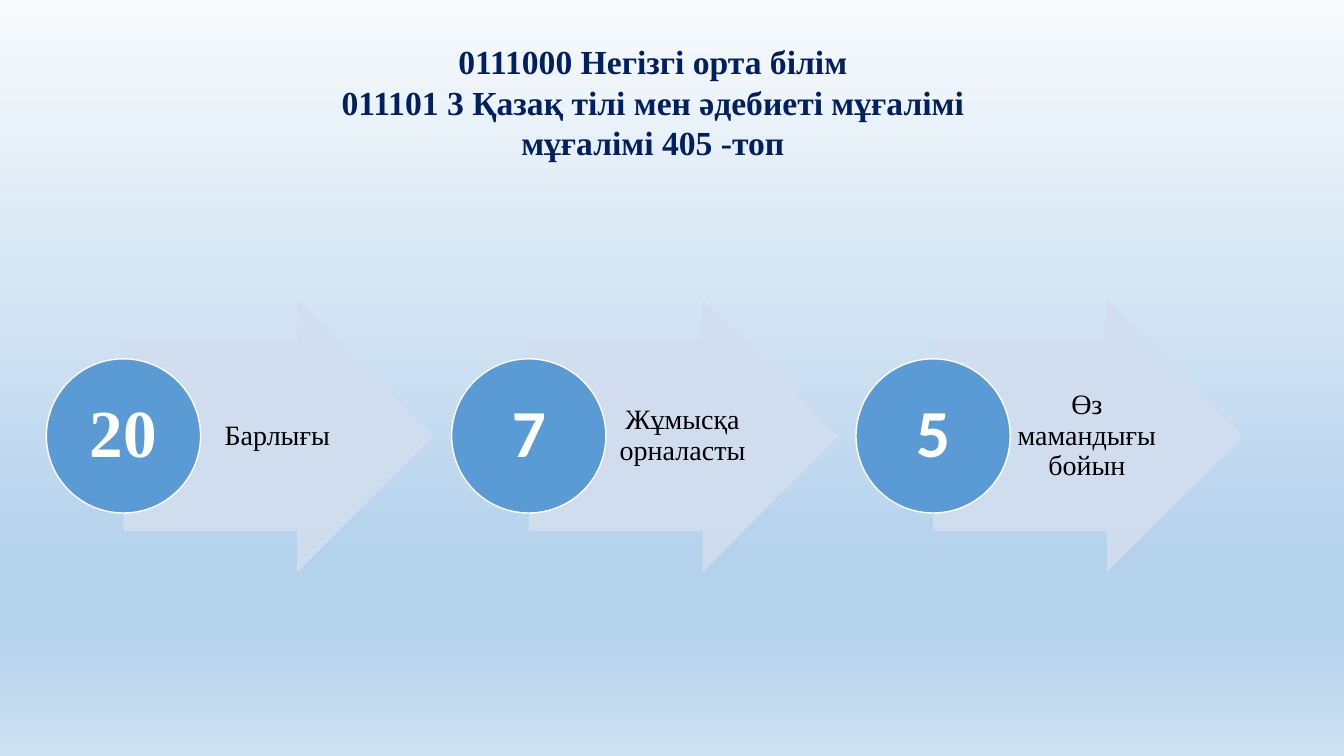
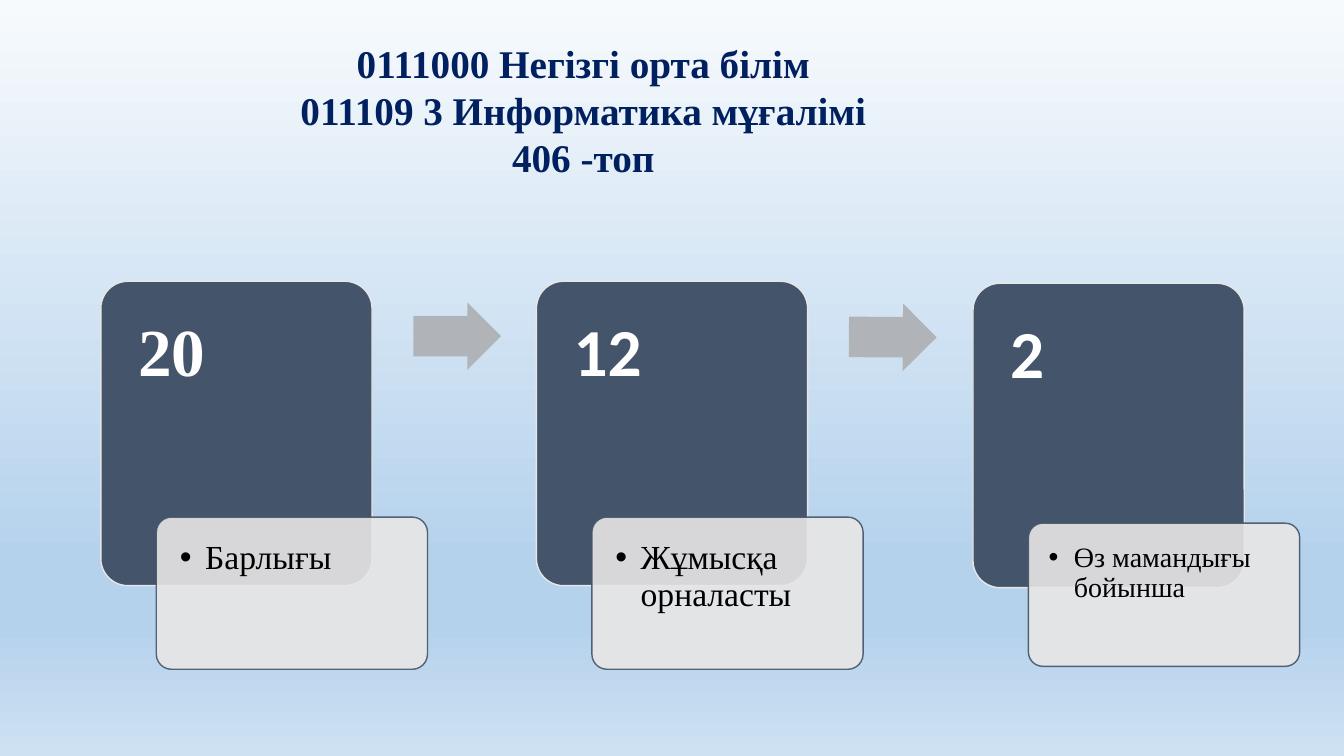
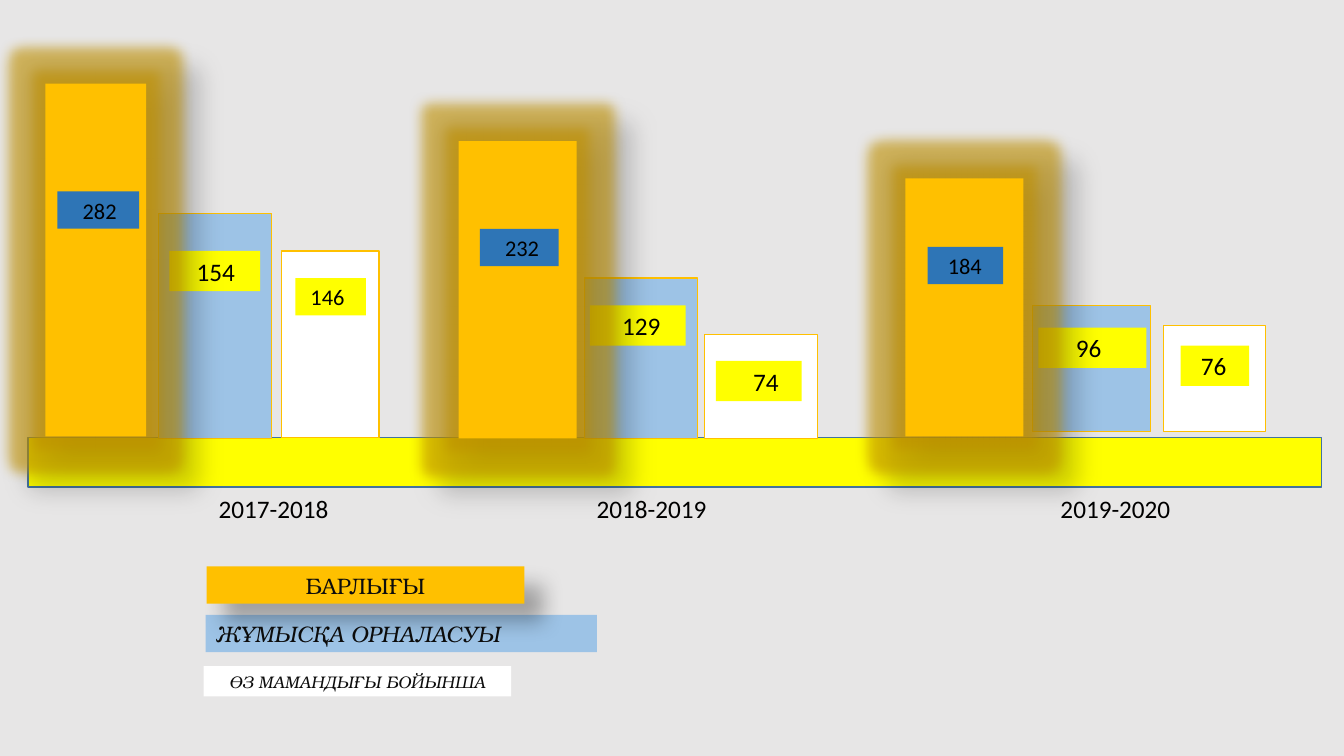
from dataclasses import dataclass
from typing import Optional

from lxml import etree
from pptx import Presentation
from pptx.dml.color import RGBColor
from pptx.enum.shapes import MSO_SHAPE
from pptx.enum.text import MSO_ANCHOR, MSO_AUTO_SIZE, PP_ALIGN
from pptx.oxml.ns import qn
from pptx.util import Emu, Pt

RECT = MSO_SHAPE.RECTANGLE
ROUND = MSO_SHAPE.ROUNDED_RECTANGLE
OVAL = MSO_SHAPE.OVAL
ARROW = MSO_SHAPE.RIGHT_ARROW
TOP, MIDDLE = MSO_ANCHOR.TOP, MSO_ANCHOR.MIDDLE
LEFT, CENTER = PP_ALIGN.LEFT, PP_ALIGN.CENTER
NO_AUTOSIZE = MSO_AUTO_SIZE.NONE

PX = 9144
TITLE_ONLY, BLANK = 5, 6
SERIF, SANS, LEGEND_FONT = "Times New Roman", "Calibri", "TeX Gyre Bonum"
COLORS = {
    "navy": "002060", "black": "000000", "ink": "0D0D0D", "white": "FFFFFF",
    "pale": "D2DEEF", "blue": "5B9BD5", "slate": "44546A", "grey": "E7E6E6",
    "arrow": "B0B4B9", "yellow": "FFFF00", "edge": "43739E", "gold": "FFC000",
    "glow": "BF9000", "sky": "9DC3E6", "deep": "2E75B6",
}
BACKDROP = [(0, "F7FAFD"), (74, "B5D2EC"), (83, "B5D2EC"), (100, "CEE1F2")]


@dataclass(frozen=True)
class Box:
    x: int
    y: int
    w: int
    h: int


@dataclass(frozen=True)
class Style:
    size: int
    font: str = SANS
    color: str = "black"
    bold: bool = False
    italic: bool = False


@dataclass(frozen=True)
class Step:
    value: str
    label: str
    font: str = SANS


@dataclass(frozen=True)
class Card:
    step: Step
    drop: int
    label_y: int
    label_h: int
    inset: int
    size: int


@dataclass(frozen=True)
class Bar:
    box: Box
    tag: Box
    value: str
    indent: int


@dataclass(frozen=True)
class Series:
    name: str
    color: str
    tag_color: str
    tag_sizes: tuple
    line: Optional[str]
    legend: Box
    legend_style: Style
    legend_align: PP_ALIGN
    bars: tuple
    raised: bool = False


def px(n: int) -> Emu:
    return Emu(n * PX)


def rgb(name: str) -> RGBColor:
    return RGBColor.from_string(COLORS[name])


def add_color(parent, hex_color: str, alpha: int):
    clr = etree.SubElement(parent, qn("a:srgbClr"), val=hex_color)
    etree.SubElement(clr, qn("a:alpha"), val=str(alpha * 1000))


def set_alpha(sp, alpha: int):
    for clr in sp.element.spPr.iter(qn("a:srgbClr")):
        etree.SubElement(clr, qn("a:alpha"), val=str(alpha * 1000))


def add_shape(slide, kind, box: Box, fill: str, line: Optional[str] = None,
              alpha: int = 100, adj: tuple = ()):
    sp = slide.shapes.add_shape(kind, px(box.x), px(box.y), px(box.w), px(box.h))
    sp.shadow.inherit = False
    sp.fill.solid()
    sp.fill.fore_color.rgb = rgb(fill)
    if line:
        sp.line.color.rgb = rgb(line)
        sp.line.width = Pt(1)
    else:
        sp.line.fill.background()
    for i, value in enumerate(adj):
        sp.adjustments[i] = value
    if alpha < 100:
        set_alpha(sp, alpha)
    return sp


def add_text(sp, lines: list, style: Style, align=CENTER, anchor=MIDDLE,
             insets: tuple = (10, 5, 10, 5), spacing: float = 1.0):
    tf = sp.text_frame
    tf.word_wrap = True
    tf.auto_size = NO_AUTOSIZE
    tf.vertical_anchor = anchor
    tf.margin_left, tf.margin_top, tf.margin_right, tf.margin_bottom = map(px, insets)
    for i, line in enumerate(lines):
        p = tf.add_paragraph() if i else tf.paragraphs[0]
        p.alignment = align
        p.line_spacing = spacing
        r = p.add_run()
        r.text = line
        r.font.name = style.font
        r.font.size = Pt(style.size)
        r.font.bold = style.bold
        r.font.italic = style.italic
        r.font.color.rgb = rgb(style.color)
    return tf


def add_text_box(slide, box: Box, text: str, style: Style, **options):
    sp = slide.shapes.add_textbox(px(box.x), px(box.y), px(box.w), px(box.h))
    add_text(sp, [text], style, **options)


def add_bullet(p, indent: int):
    pPr = p._p.get_or_add_pPr()
    pPr.set("marL", str(px(indent)))
    pPr.set("indent", str(-px(indent)))
    etree.SubElement(pPr, qn("a:buFont"), typeface="Arial")
    etree.SubElement(pPr, qn("a:buChar"), char="•")


def add_drop_shadow(sp):
    effects = sp.element.spPr.find(qn("a:effectLst"))
    shadow = etree.SubElement(effects, qn("a:outerShdw"), blurRad=str(Pt(15)),
                              dist=str(Pt(18)), dir="2700000", algn="tl",
                              rotWithShape="0")
    add_color(shadow, COLORS["black"], 30)


def add_glow(sp):
    effects = sp.element.spPr.find(qn("a:effectLst"))
    glow = etree.SubElement(effects, qn("a:glow"), rad=str(Pt(18)))
    add_color(glow, COLORS["glow"], 60)


def set_backdrop(master):
    fill = master.background.fill
    fill.gradient()
    fill.gradient_angle = 270
    stops = next(master.element.iter(qn("a:gsLst")))
    for stop in list(stops):
        stops.remove(stop)
    for pos, color in BACKDROP:
        stop = etree.SubElement(stops, qn("a:gs"), pos=str(pos * 1000))
        etree.SubElement(stop, qn("a:srgbClr"), val=color)


def add_titled_slide(prs, box: Box, lines: list, size: int):
    slide = prs.slides.add_slide(prs.slide_layouts[TITLE_ONLY])
    title = slide.shapes.title
    title.left, title.top = px(box.x), px(box.y)
    title.width, title.height = px(box.w), px(box.h)
    add_text(title, lines, Style(size, SERIF, "navy", bold=True), anchor=TOP)
    return slide


def number_style(step: Step) -> Style:
    return Style(48, step.font, "white", bold=True)


def build_arrow_slide(prs):
    slide = add_titled_slide(prs, Box(314, 36, 667, 131), [
        "0111000 Негізгі орта білім",
        "011101 3 Қазақ тілі мен әдебиеті мұғалімі мұғалімі 405 -топ",
    ], 24)
    steps = [Step("20", "Барлығы", SERIF), Step("7", "Жұмысқа орналасты"),
             Step("5", "Өз мамандығы бойын")]
    for i, step in enumerate(steps):
        x = round(46 + i * 401.5)
        add_shape(slide, ARROW, Box(x + 77, 299, 306, 267), "pale", "pale", 90, (0.7, 0.5))
        add_text_box(slide, Box(x + 153, 339, 149, 187), step.label, Style(20, SERIF),
                     insets=(6, 1, 3, 1), spacing=0.9)
        circle = add_shape(slide, OVAL, Box(x, 356, 153, 153), "blue", "white")
        add_text(circle, [step.value], number_style(step), insets=(3, 3, 3, 3), spacing=0.9)


def build_card_slide(prs):
    slide = add_titled_slide(prs, Box(245, 34, 667, 151), [
        "0111000 Негізгі орта білім",
        "011109 3 Информатика мұғалімі",
        "406 -топ",
    ], 28)
    cards = [
        Card(Step("20", "Барлығы", SERIF), 0, 513, 151, 19, 24),
        Card(Step("12", "Жұмысқа орналасты"), 0, 513, 151, 19, 24),
        Card(Step("2", "Өз мамандығы бойынша"), 2, 519, 142, 16, 20),
    ]
    for i, card in enumerate(cards):
        x = round(100 + i * 432.5)
        panel = add_shape(slide, ROUND, Box(x, 279 + card.drop, 269, 302), "slate", "grey",
                          adj=(0.1,))
        add_text(panel, [card.step.value], number_style(card.step), LEFT, TOP,
                 (29, 29, 29, 20), 0.9)
        label = add_shape(slide, ROUND, Box(x + 55, card.label_y, 269, card.label_h),
                          "grey", "slate", 90, (0.1,))
        tf = add_text(label, [card.step.label], Style(card.size, SERIF), LEFT, TOP,
                      (card.inset,) * 4, 0.9)
        add_bullet(tf.paragraphs[0], 25)
        if i < len(cards) - 1:
            arrow = add_shape(slide, ARROW, Box(x + 310, 300 + i, 87, 67), "arrow",
                              adj=(0.6, 0.5))
            arrow.rotation = 0.3 * i


def draw_series(slide, series: Series):
    for bar, size in zip(series.bars, series.tag_sizes):
        sp = add_shape(slide, RECT, bar.box, series.color, series.line)
        if series.raised:
            add_glow(sp)
            add_drop_shadow(sp)
    for bar, size in zip(series.bars, series.tag_sizes):
        tag = add_shape(slide, RECT, bar.tag, series.tag_color)
        add_text(tag, [bar.value], Style(size), LEFT, insets=(bar.indent, 5, 0, 5))
    legend = add_shape(slide, RECT, series.legend, series.color)
    add_text(legend, [series.name], series.legend_style, series.legend_align)
    if series.raised:
        add_drop_shadow(legend)


def build_bar_slide(prs):
    slide = prs.slides.add_slide(prs.slide_layouts[BLANK])
    slide.background.fill.solid()
    slide.background.fill.fore_color.rgb = rgb("grey")
    add_shape(slide, RECT, Box(28, 434, 1283, 49), "yellow", "edge")
    for year, x in (("2017-2018", 207), ("2018-2019", 582), ("2019-2020", 1042)):
        add_text_box(slide, Box(x, 484, 130, 40), year, Style(18), align=LEFT, anchor=TOP)

    own_field = Series(
        "ӨЗ МАМАНДЫҒЫ БОЙЫНША", "white", "yellow", (16, 18, 18), "gold",
        Box(202, 661, 305, 30), Style(12, LEGEND_FONT, "ink", italic=True), CENTER, (
            Bar(Box(279, 249, 97, 185), Box(293, 276, 70, 37), "146", 15),
            Bar(Box(699, 332, 112, 103), Box(710, 358, 85, 40), "74", 37),
            Bar(Box(1154, 323, 101, 105), Box(1171, 343, 68, 40), "76", 20)))
    employed = Series(
        "ЖҰМЫСҚА ОРНАЛАСУЫ", "sky", "yellow", (18, 18, 18), "gold",
        Box(204, 610, 388, 37), Style(16, LEGEND_FONT, "ink", italic=True), LEFT, (
            Bar(Box(157, 212, 112, 223), Box(168, 249, 90, 40), "154", 27),
            Bar(Box(580, 276, 112, 159), Box(585, 303, 95, 40), "129", 32),
            Bar(Box(1024, 303, 117, 125), Box(1030, 325, 107, 40), "96", 37)))
    total = Series(
        "БАРЛЫҒЫ", "gold", "deep", (16, 16, 16), None,
        Box(205, 562, 315, 37), Style(16, LEGEND_FONT, "ink"), CENTER, (
            Bar(Box(45, 83, 100, 350), Box(57, 190, 81, 37), "282", 25),
            Bar(Box(455, 140, 117, 295), Box(476, 227, 78, 37), "232", 25),
            Bar(Box(898, 177, 117, 256), Box(920, 245, 75, 37), "184", 20)), raised=True)
    for series in (own_field, employed, total):
        draw_series(slide, series)


def main():
    prs = Presentation()
    prs.slide_width, prs.slide_height = px(1333), px(750)
    set_backdrop(prs.slide_master)
    build_arrow_slide(prs)
    build_card_slide(prs)
    build_bar_slide(prs)
    prs.save("out.pptx")


if __name__ == "__main__":
    main()
